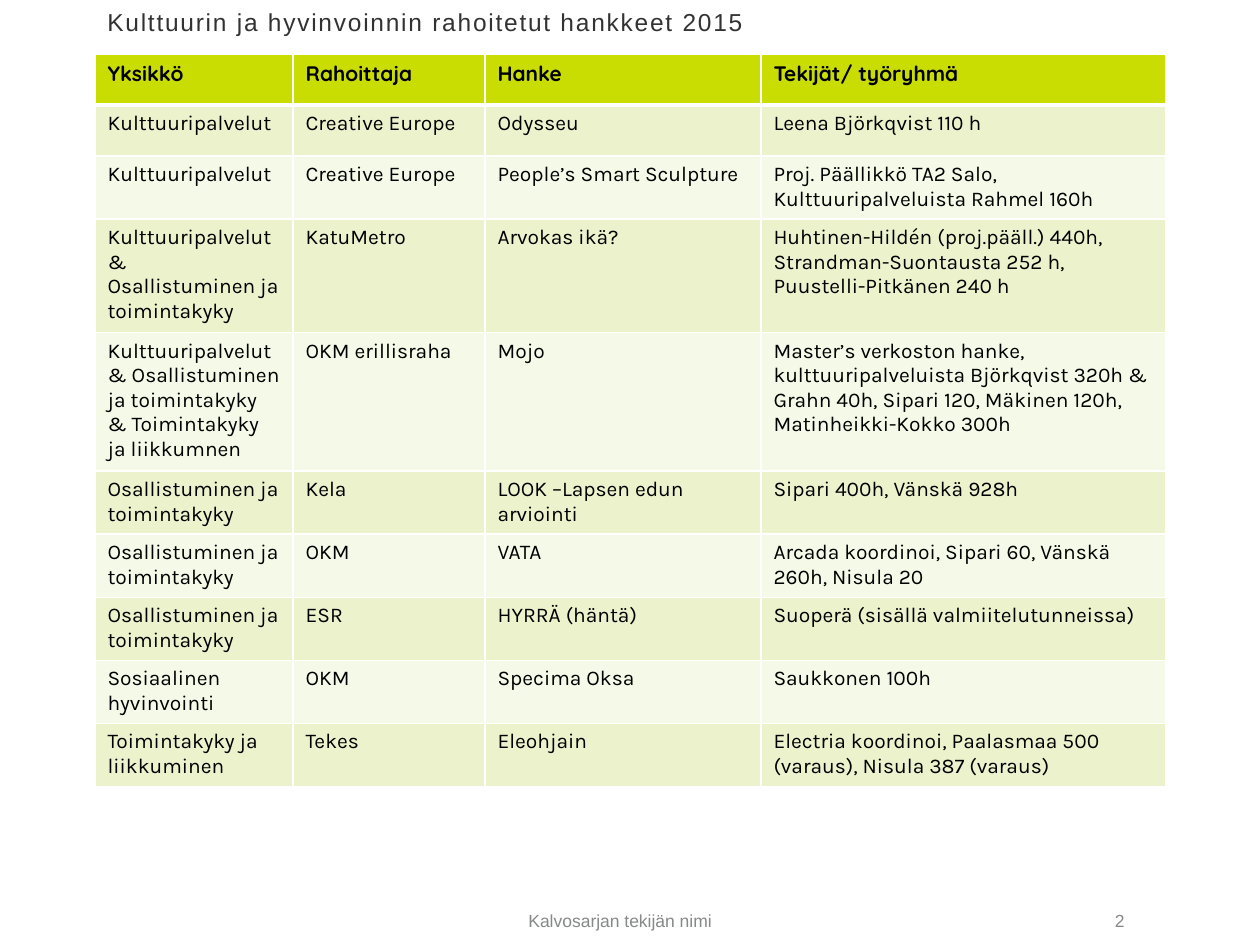
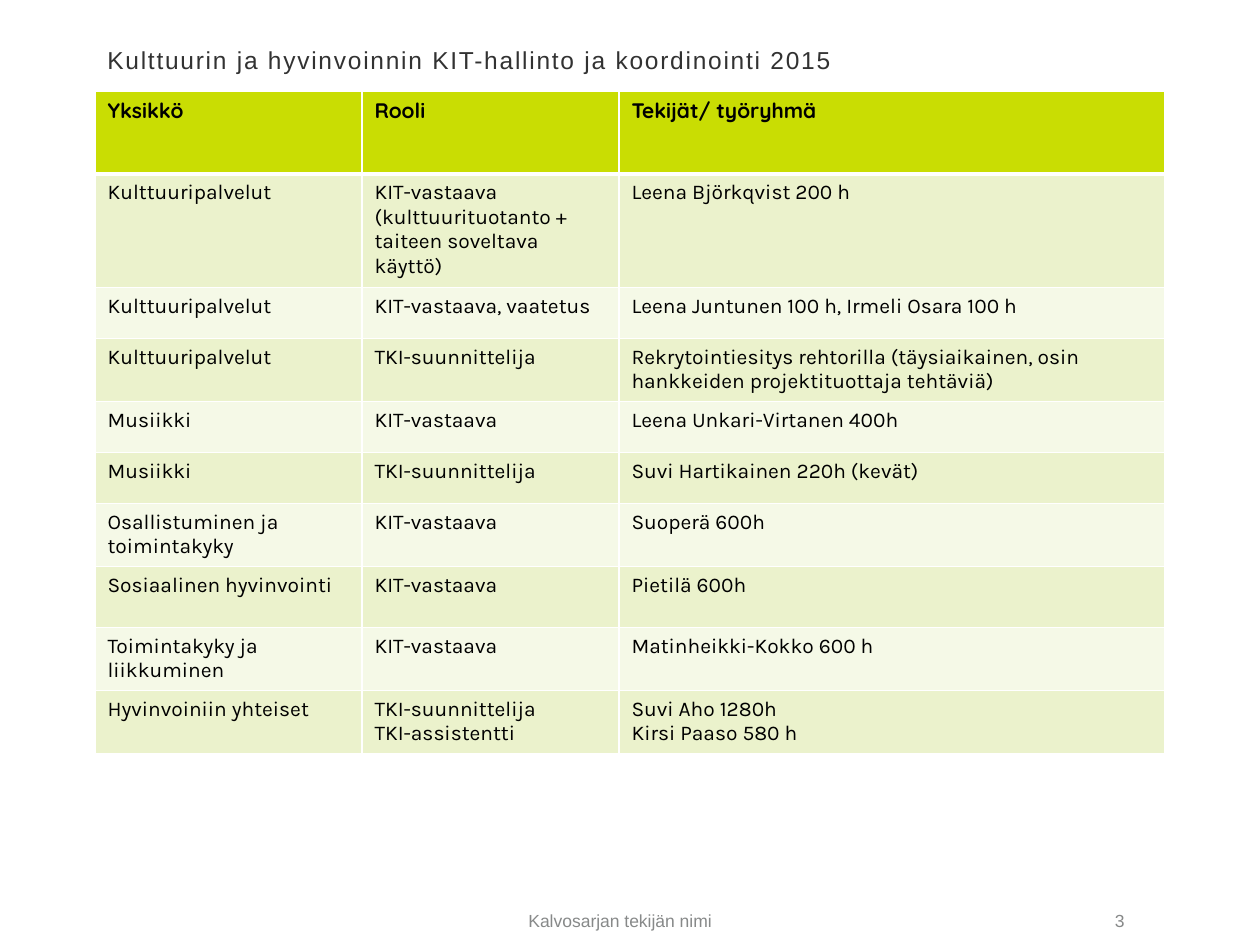
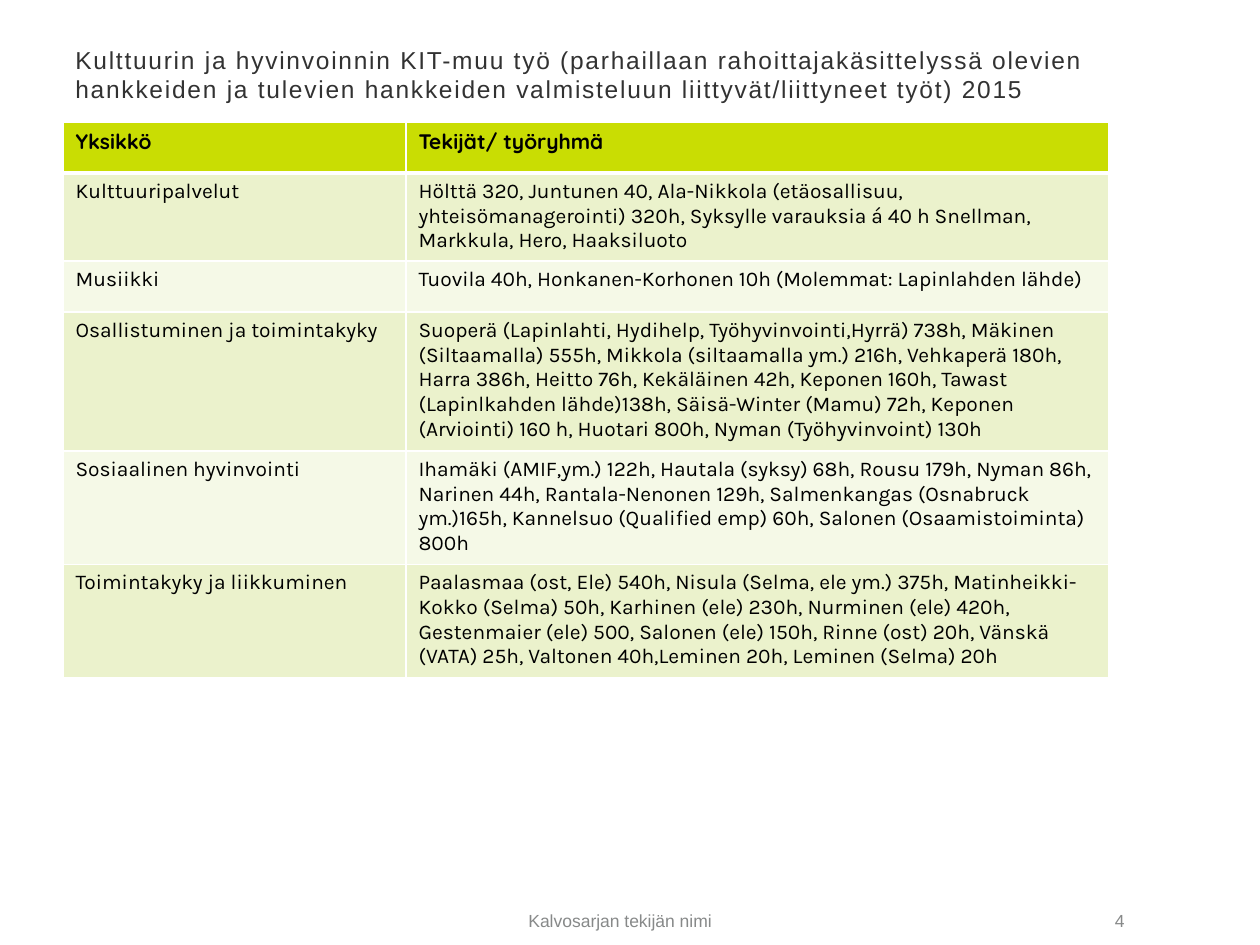
from lxml import etree
from pptx import Presentation
from pptx import util as u
from pptx.dml.color import RGBColor
from pptx.enum import text
from pptx.oxml.ns import qn

# Shared look
PX = 914400 / 126
LIME, PALE, PALER, WHITE = "C9DD03", "EBF2CC", "F5F9E7", "FFFFFF"
BLACK, TITLE_GREY, FOOTER_GREY = "000000", "323232", "878989"
ROW_HEIGHT = 51
FOOTER = "Kalvosarjan tekijän nimi"

# Table contents: the header row comes first
FUNDED = [
    ("Yksikkö", "Rahoittaja", "Hanke", "Tekijät/ työryhmä"),
    ("Kulttuuripalvelut", "Creative Europe", "Odysseu", "Leena Björkqvist 110 h"),
    ("Kulttuuripalvelut", "Creative Europe", "People’s Smart Sculpture",
     "Proj. Päällikkö TA2 Salo, Kulttuuripalveluista Rahmel 160h"),
    ("Kulttuuripalvelut &\vOsallistuminen ja toimintakyky", "KatuMetro", "Arvokas ikä?",
     "Huhtinen-Hildén (proj.pääll.) 440h, Strandman-Suontausta 252 h, "
     "Puustelli-Pitkänen 240 h"),
    ("Kulttuuripalvelut & Osallistuminen ja toimintakyky & Toimintakyky ja liikkumnen",
     "OKM erillisraha", "Mojo",
     "Master’s verkoston hanke, kulttuuripalveluista Björkqvist 320h & Grahn 40h, "
     "Sipari 120, Mäkinen 120h, Matinheikki-Kokko 300h"),
    ("Osallistuminen ja toimintakyky", "Kela", "LOOK –Lapsen edun arviointi",
     "Sipari 400h, Vänskä 928h"),
    ("Osallistuminen ja toimintakyky", "OKM", "VATA",
     "Arcada koordinoi, Sipari 60, Vänskä 260h, Nisula 20"),
    ("Osallistuminen ja toimintakyky", "ESR", "HYRRÄ (häntä)",
     "Suoperä (sisällä valmiitelutunneissa)"),
    ("Sosiaalinen hyvinvointi", "OKM", "Specima Oksa", "Saukkonen 100h"),
    ("Toimintakyky ja liikkuminen", "Tekes", "Eleohjain",
     "Electria koordinoi, Paalasmaa 500 (varaus), Nisula 387 (varaus)"),
]
COORDINATION = [
    ("Yksikkö", "Rooli", "Tekijät/ työryhmä"),
    ("Kulttuuripalvelut", "KIT-vastaava (kulttuurituotanto + taiteen soveltava käyttö)",
     "Leena Björkqvist 200 h"),
    ("Kulttuuripalvelut", "KIT-vastaava, vaatetus",
     "Leena Juntunen 100 h, Irmeli Osara 100 h"),
    ("Kulttuuripalvelut", "TKI-suunnittelija",
     "Rekrytointiesitys rehtorilla (täysiaikainen, osin hankkeiden "
     "projektituottaja tehtäviä)"),
    ("Musiikki", "KIT-vastaava", "Leena Unkari-Virtanen 400h"),
    ("Musiikki", "TKI-suunnittelija", "Suvi Hartikainen 220h (kevät)"),
    ("Osallistuminen ja toimintakyky", "KIT-vastaava", "Suoperä 600h"),
    ("Sosiaalinen hyvinvointi", "KIT-vastaava", "Pietilä 600h"),
    ("Toimintakyky ja liikkuminen", "KIT-vastaava", "Matinheikki-Kokko 600 h"),
    ("Hyvinvoiniin yhteiset", "TKI-suunnittelija\nTKI-assistentti",
     "Suvi Aho 1280h\nKirsi Paaso 580 h"),
]
OTHER_WORK = [
    ("Yksikkö", "Tekijät/ työryhmä"),
    ("Kulttuuripalvelut",
     "Hölttä 320, Juntunen 40, Ala-Nikkola (etäosallisuu, yhteisömanagerointi) 320h, "
     "Syksylle varauksia á 40 h Snellman, Markkula, Hero, Haaksiluoto"),
    ("Musiikki", "Tuovila 40h, Honkanen-Korhonen 10h (Molemmat: Lapinlahden lähde)"),
    ("Osallistuminen ja toimintakyky",
     "Suoperä (Lapinlahti, Hydihelp, Työhyvinvointi,Hyrrä) 738h, "
     "Mäkinen (Siltaamalla) 555h, Mikkola (siltaamalla ym.) 216h, Vehkaperä 180h, "
     "Harra 386h, Heitto 76h, Kekäläinen 42h, Keponen 160h, "
     "Tawast (Lapinlkahden lähde)138h, Säisä-Winter (Mamu) 72h, "
     "Keponen (Arviointi) 160 h, Huotari 800h, Nyman (Työhyvinvoint) 130h"),
    ("Sosiaalinen hyvinvointi",
     "Ihamäki (AMIF,ym.) 122h, Hautala (syksy) 68h, Rousu 179h, Nyman 86h, "
     "Narinen 44h, Rantala-Nenonen 129h, Salmenkangas (Osnabruck ym.)165h, "
     "Kannelsuo (Qualified emp) 60h, Salonen (Osaamistoiminta) 800h"),
    ("Toimintakyky ja liikkuminen",
     "Paalasmaa (ost, Ele) 540h, Nisula (Selma, ele ym.) 375h, "
     "Matinheikki-Kokko (Selma) 50h, Karhinen (ele) 230h, Nurminen (ele) 420h, "
     "Gestenmaier (ele) 500, Salonen (ele) 150h, Rinne (ost) 20h, Vänskä (VATA) 25h, "
     "Valtonen 40h,Leminen 20h, Leminen (Selma) 20h"),
]


def px(length):
    return u.Emu(round(length * PX))


def color(hex_string):
    return RGBColor.from_string(hex_string)


def format_runs(frame, font_name, size, hex_string, bold=False):
    for paragraph in frame.paragraphs:
        for run in paragraph.runs:
            run.font.name = font_name
            run.font.size = u.Pt(size)
            run.font.bold = bold
            run.font.color.rgb = color(hex_string)


def add_label(slide, wording, left, top, width, height, size, hex_string):
    frame = slide.shapes.add_textbox(px(left), px(top), px(width), px(height)).text_frame
    frame.word_wrap = True
    frame.text = wording
    format_runs(frame, "Arial", size, hex_string)
    return frame


def add_title(slide, wording, left, top):
    title = add_label(slide, wording, left, top, 1071, 73, 14, TITLE_GREY).paragraphs[0]
    title.line_spacing = u.Pt(17)
    title.runs[0].font._element.set("spc", "100")


def add_footer(slide, number):
    for wording, left, width, align in (
            (FOOTER, 315, 610, text.PP_ALIGN.CENTER),
            (str(number), 935, 202, text.PP_ALIGN.RIGHT)):
        frame = add_label(slide, wording, left, 902, width, 43, 10, FOOTER_GREY)
        frame.margin_top = px(8)
        frame.paragraphs[0].alignment = align


def add_borders(cell, top, bottom):
    properties = cell._tc.get_or_add_tcPr()
    for side, points in (("L", 1), ("R", 1), ("T", top), ("B", bottom)):
        line = etree.SubElement(properties, qn(f"a:ln{side}"), w=str(u.Pt(points)))
        fill = etree.SubElement(line, qn("a:solidFill"))
        etree.SubElement(fill, qn("a:srgbClr"), val=WHITE)


def fill_cell(cell, wording, row):
    # A thick rule separates the header from the banded rows
    add_borders(cell, top=3 if row == 1 else 1, bottom=3 if row == 0 else 1)
    cell.fill.solid()
    cell.fill.fore_color.rgb = color(LIME if row == 0 else PALE if row % 2 else PALER)
    cell.text_frame.text = wording
    format_runs(cell.text_frame, "Karla" if row else "Quicksand", 12, BLACK, bold=row == 0)


def add_project_table(slide, rows, left, top, widths, taller_rows):
    heights = [taller_rows.get(row, ROW_HEIGHT) for row in range(len(rows))]
    table = slide.shapes.add_table(len(rows), len(widths), px(left), px(top),
                                   px(sum(widths)), px(sum(heights))).table
    for column, width in zip(table.columns, widths):
        column.width = px(width)
    for row, (wordings, height) in enumerate(zip(rows, heights)):
        table.rows[row].height = px(height)
        for column, wording in enumerate(wordings):
            fill_cell(table.cell(row, column), wording, row)


def main():
    deck = Presentation()
    deck.slide_width, deck.slide_height = px(1260), px(945)

    # Title, left edge, title top, table top, column widths, taller rows, rows
    pages = [
        ("Kulttuurin ja hyvinvoinnin rahoitetut hankkeet 2015",
         95, 0, 54, (198, 192, 276, 405), {}, FUNDED),
        ("Kulttuurin ja hyvinvoinnin KIT-hallinto ja koordinointi 2015",
         95, 38, 91, (267, 257, 546), {0: 83, 7: 61}, COORDINATION),
        ("Kulttuurin ja hyvinvoinnin KIT-muu työ (parhaillaan rahoittajakäsittelyssä "
         "olevien hankkeiden ja tulevien hankkeiden valmisteluun liittyvät/liittyneet "
         "työt) 2015",
         63, 38, 122, (343, 703), {}, OTHER_WORK),
    ]
    for number, (title, left, title_top, table_top, widths, taller, rows) in enumerate(pages, 2):
        slide = deck.slides.add_slide(deck.slide_layouts[6])
        add_title(slide, title, left, title_top)
        add_project_table(slide, rows, left, table_top, widths, taller)
        add_footer(slide, number)

    deck.save("out.pptx")


if __name__ == "__main__":
    main()
